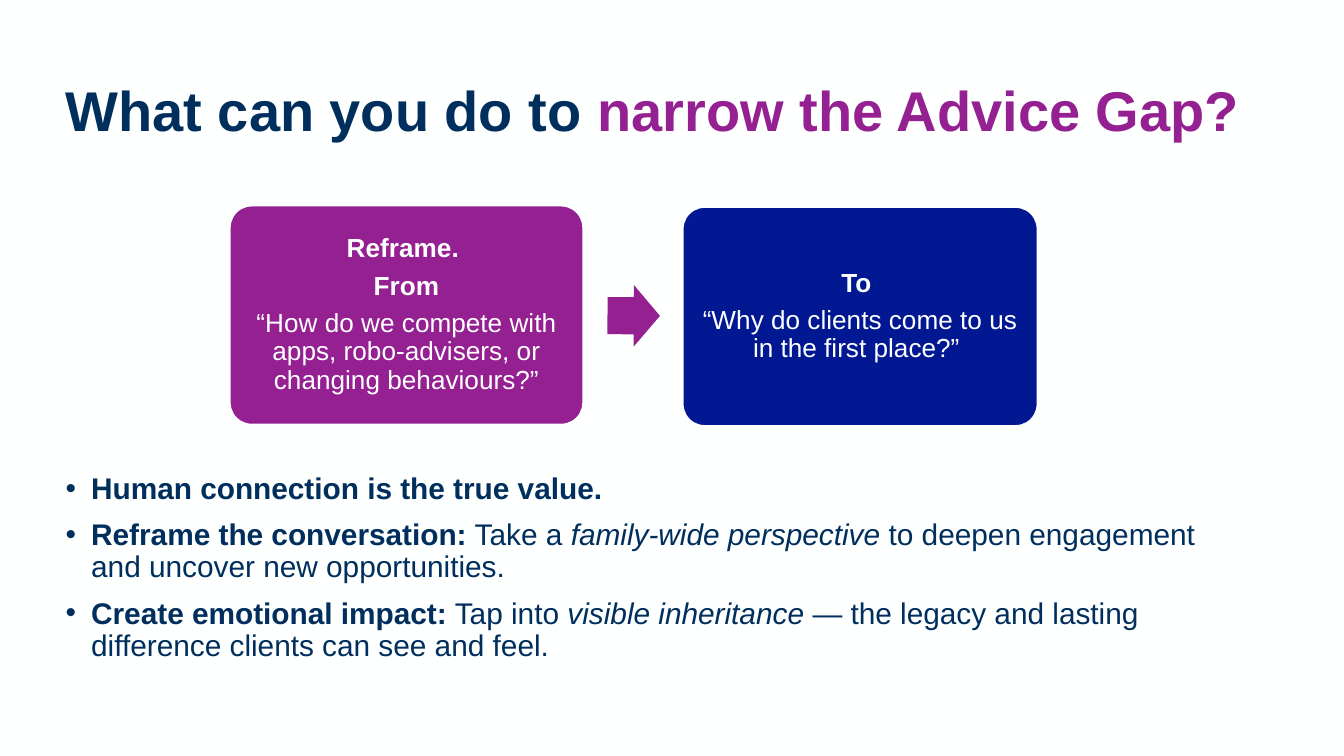
"""Builds the slide on narrowing the Advice Gap."""
import pptx
import pptx.util
import pptx.dml.color
import pptx.enum.shapes
import pptx.enum.text
import pptx.oxml

PX = 4572
NAVY, PLUM, BLUE, WHITE = "002F5E", "942092", "011892", "FEFFFF"
Pt = pptx.util.Pt
KIND = pptx.enum.shapes.MSO_SHAPE
MID = pptx.enum.text.MSO_ANCHOR.MIDDLE
NS = 'xmlns:a="http://schemas.openxmlformats.org/drawingml/2006/main"'


def tint(code):
    return pptx.dml.color.RGBColor.from_string(code)


def style(par, size, color):
    par.font.name = "Arial"
    par.font.size = Pt(size)
    par.font.color.rgb = tint(color)


deck = pptx.Presentation()
deck.slide_width, deck.slide_height = 2000 * PX, 1125 * PX
slide = deck.slides.add_slide(deck.slide_layouts[6])
slide.background.fill.solid()
slide.background.fill.fore_color.rgb = tint(WHITE)
shapes = slide.shapes

title = shapes.add_textbox(78 * PX, 60 * PX, 1862 * PX, 218 * PX).text_frame
title.word_wrap = True
title.vertical_anchor = MID
par = title.paragraphs[0]
par.line_spacing = Pt(31)
style(par, 30, NAVY)
par.font.bold = True
par.add_run().text = "What can you do to "
run = par.add_run()
run.text = "narrow the Advice Gap?"
run.font.color.rgb = tint(PLUM)

points = [
    [("Human connection is the true value.", "b")],
    [("Reframe the conversation:", "b"), (" Take a ", ""),
     ("family-wide perspective", "i"),
     (" to deepen engagement and uncover new opportunities.", "")],
    [("Create emotional impact:", "b"), (" Tap into ", ""),
     ("visible inheritance", "i"),
     (" — the legacy and lasting difference clients can see and feel.", "")],
]
body = shapes.add_textbox(78 * PX, 695 * PX, 1788 * PX, 596 * PX).text_frame
body.word_wrap = True
for n, parts in enumerate(points):
    par = body.add_paragraph() if n else body.paragraphs[0]
    par.line_spacing = 0.9
    if n:
        par.space_before = Pt(7.5)
    props = par._p.get_or_add_pPr()
    props.set("marL", str(38 * PX))
    props.set("indent", str(-38 * PX))
    props.append(pptx.oxml.parse_xml(f'<a:buFont {NS} typeface="Arial"/>'))
    props.append(pptx.oxml.parse_xml(f'<a:buChar {NS} char="•"/>'))
    style(par, 16, NAVY)
    for text, mark in parts:
        run = par.add_run()
        run.text = text
        run.font.bold = mark == "b"
        run.font.italic = mark == "i"

cards = [
    (342, 306, 526, PLUM, ["Reframe. ", "From"],
     "“How do we compete with apps, robo-advisers, or changing behaviours?”"),
    (1016, 308, 528, BLUE, ["To "],
     "“Why do clients come to us in the first place?” "),
]
for left, top, width, color, heads, quote in cards:
    card = shapes.add_shape(KIND.ROUNDED_RECTANGLE, left * PX, top * PX,
                            width * PX, 326 * PX)
    card.adjustments[0] = 0.1
    card.shadow.inherit = False
    card.fill.solid()
    card.fill.fore_color.rgb = tint(color)
    card.line.color.rgb = tint(WHITE)
    card.line.width = Pt(1)
    frame = card.text_frame
    frame.word_wrap = True
    frame.vertical_anchor = MID
    frame.margin_left = frame.margin_right = 12 * PX
    frame.margin_top = frame.margin_bottom = 12 * PX
    for n, text in enumerate(heads + [quote]):
        par = frame.add_paragraph() if n else frame.paragraphs[0]
        par.text = text
        par.alignment = pptx.enum.text.PP_ALIGN.CENTER
        par.line_spacing = 0.9
        par.space_after = Pt(4.9)
        style(par, 14, WHITE)
        par.font.bold = text in heads

arrow = shapes.add_shape(KIND.RIGHT_ARROW, 904 * PX, 424 * PX, 78 * PX, 92 * PX)
arrow.adjustments[0] = 0.6
arrow.adjustments[1] = 0.5
arrow.rotation = 0.2
arrow.shadow.inherit = False
arrow.fill.solid()
arrow.fill.fore_color.rgb = tint(PLUM)
arrow.line.fill.background()

deck.save("out.pptx")
